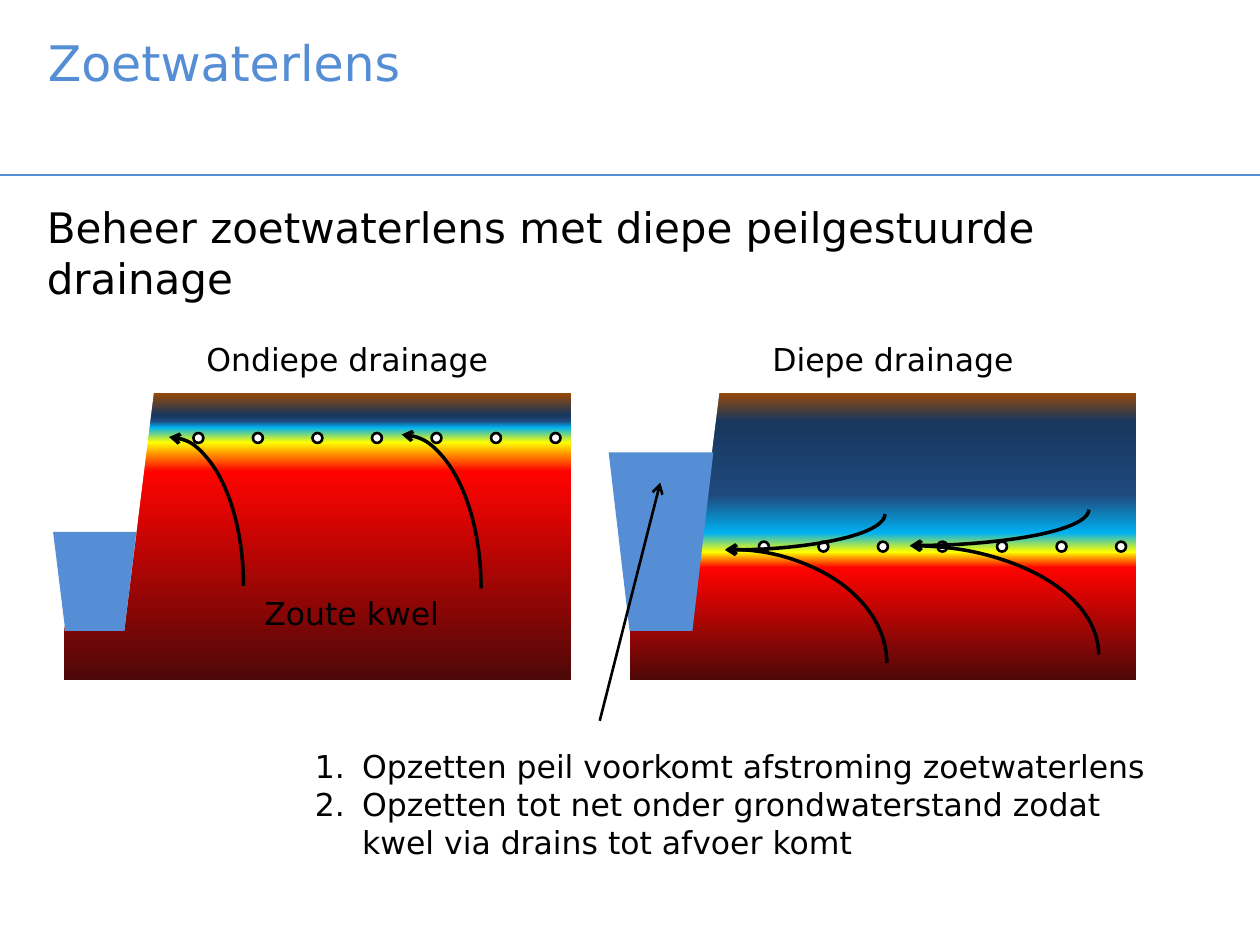
from lxml import etree
from pptx import Presentation
from pptx.dml.color import RGBColor
from pptx.enum.shapes import MSO_CONNECTOR, MSO_SHAPE
from pptx.enum.text import MSO_ANCHOR, MSO_AUTO_SIZE, PP_ALIGN
from pptx.oxml.ns import qn
from pptx.util import Cm, Pt

RECTANGLE, TRAPEZOID = MSO_SHAPE.RECTANGLE, MSO_SHAPE.TRAPEZOID
OVAL, ARC = MSO_SHAPE.OVAL, MSO_SHAPE.ARC
STRAIGHT = MSO_CONNECTOR.STRAIGHT
TOP, LEFT = MSO_ANCHOR.TOP, PP_ALIGN.LEFT
NO_FIT, GROW = MSO_AUTO_SIZE.NONE, MSO_AUTO_SIZE.SHAPE_TO_FIT_TEXT

FONT = "DejaVu Sans"
BLUE = RGBColor(0x55, 0x8E, 0xD5)
BLACK = RGBColor(0x00, 0x00, 0x00)
WHITE = RGBColor(0xFF, 0xFF, 0xFF)
YELLOW = RGBColor(0xFF, 0xFF, 0x00)
ORANGE = RGBColor(0xFF, 0x7A, 0x00)
RED = RGBColor(0xFF, 0x03, 0x00)
DARK_RED = RGBColor(0x4D, 0x08, 0x08)
BROWN = RGBColor(0x98, 0x48, 0x07)
NAVY = RGBColor(0x17, 0x37, 0x5E)
DARK_BLUE = RGBColor(0x1F, 0x49, 0x7D)
CYAN = RGBColor(0x00, 0xB0, 0xF0)

# Gradient stops from top to bottom, in percent
SALT = [(0, YELLOW), (6, ORANGE), (12, RED), (100, DARK_RED)]
SHALLOW_LENS = [(1, BROWN), (45, NAVY), (57, DARK_BLUE), (70, CYAN), (100, YELLOW)]
DEEP_LENS = [(0, BROWN), (18, NAVY), (64, DARK_BLUE), (88, CYAN), (100, YELLOW)]

# Heights shared by both cross-sections, in cm
GROUND, DITCH_BED, BOTTOM = 7.92, 12.72, 13.72
DRAIN_COUNT, DRAIN_PITCH, DRAIN_SIZE = 7, 1.2, 0.2


def box(left, top, width, height):
    return Cm(left), Cm(top), Cm(width), Cm(height)


def write(frame, lines, size, color=BLACK, **frame_format):
    """Fill a text frame and return its paragraphs."""
    for name, value in frame_format.items():
        setattr(frame, name, value)
    frame.text = "\n".join(lines)
    font_format = {"name": FONT, "size": Pt(size)}
    for paragraph in frame.paragraphs:
        paragraph.alignment = LEFT
        paragraph.space_before = Pt(0)
        for run in paragraph.runs:
            for name, value in font_format.items():
                setattr(run.font, name, value)
            run.font.color.rgb = color
    return frame.paragraphs


def set_bullet(paragraph, tag, indent, **attributes):
    properties = paragraph._p.get_or_add_pPr()
    properties.set("marL", str(Cm(indent)))
    properties.set("indent", str(-Cm(indent)))
    etree.SubElement(properties, qn(tag), attributes)


def fill_placeholder(placeholder, place, lines, size, color=BLACK):
    for name, value in zip(("left", "top", "width", "height"), box(*place)):
        setattr(placeholder, name, value)
    return write(placeholder.text_frame, lines, size, color, word_wrap=True,
                 auto_size=NO_FIT, vertical_anchor=TOP)


def add_text(slide, place, lines, wrap=False):
    text_box = slide.shapes.add_textbox(*box(*place))
    return write(text_box.text_frame, lines, 18, word_wrap=wrap, auto_size=GROW)


def set_line(shape, color, width, arrow_end=None):
    shape.line.color.rgb = color
    shape.line.width = Pt(width)
    if arrow_end:
        line = shape._element.spPr.find(qn("a:ln"))
        etree.SubElement(line, qn(arrow_end), type="arrow")


def add_shape(slide, kind, place, color=None, rotation=0):
    shape = slide.shapes.add_shape(kind, *box(*place))
    shape.shadow.inherit = False
    shape.rotation = rotation
    shape.line.fill.background()
    if color is None:
        shape.fill.background()
    else:
        shape.fill.solid()
        shape.fill.fore_color.rgb = color
    return shape


def add_layer(slide, place, stops):
    """Add a ground layer with a gradient running downwards."""
    layer = add_shape(slide, RECTANGLE, place)
    layer.fill.gradient()
    layer.fill.gradient_angle = 270
    stop_list = layer._element.spPr.find(".//" + qn("a:gsLst"))
    for stop in list(stop_list):
        stop_list.remove(stop)
    for position, color in stops:
        stop = etree.SubElement(stop_list, qn("a:gs"), pos=str(position * 1000))
        etree.SubElement(stop, qn("a:srgbClr"), val=str(color))


def add_flow(slide, place, arrow_end, rotation=0):
    set_line(add_shape(slide, ARC, place, rotation=rotation), BLACK, 2, arrow_end)


def add_connector(slide, start, end, color, width, arrow_end=None):
    connector = slide.shapes.add_connector(
        STRAIGHT, *[Cm(value) for value in (*start, *end)])
    set_line(connector, color, width, arrow_end)
    etree.SubElement(connector._element.spPr, qn("a:effectLst"))


def add_section(slide, left, interface, lens, water, slope, drain_top):
    """Draw a cross-section: ground layers, ditch and row of drains."""
    add_layer(slide, (left, interface, 10.21, BOTTOM - interface), SALT)
    add_layer(slide, (left + 1.19, GROUND, 9.02, interface - GROUND), lens)
    add_shape(slide, TRAPEZOID, (left - 0.59, GROUND, 2.39, DITCH_BED - GROUND),
              WHITE, 180)
    water_left, water_top, water_width = water
    ditch = add_shape(slide, TRAPEZOID, (water_left, water_top, water_width,
                                         DITCH_BED - water_top), BLUE, 180)
    ditch.adjustments[0] = slope
    for index in range(DRAIN_COUNT):
        drain_left = left + 2.6 + index * DRAIN_PITCH
        drain = add_shape(slide, OVAL,
                          (drain_left, drain_top, DRAIN_SIZE, DRAIN_SIZE), WHITE)
        set_line(drain, BLACK, 1.5)


def main():
    presentation = Presentation()
    presentation.slide_width, presentation.slide_height = Cm(25.4), Cm(19.05)
    slide = presentation.slides.add_slide(presentation.slide_layouts[1])

    # Heading and main statement
    add_connector(slide, (0, 3.53), (25.4, 3.53), BLUE, 0.75)
    fill_placeholder(slide.shapes.title, (0.71, 0.53, 24, 2.59),
                     ["Zoetwaterlens"], 28, BLUE)
    statement = fill_placeholder(
        slide.placeholders[1], (0.69, 3.94, 24, 14.6),
        ["Beheer zoetwaterlens met diepe peilgestuurde drainage"], 24)
    set_bullet(statement[0], "a:buNone", 0)

    # Cross-sections with shallow and deep drainage
    add_section(slide, 1.3, 8.92, SHALLOW_LENS, (1.07, 10.72, 1.68), 0.147, 8.73)
    add_text(slide, (3.91, 6.73, 6.2, 1.02), ["Ondiepe drainage"])
    add_section(slide, 12.7, 11.13, DEEP_LENS, (12.27, 9.12, 2.11), 0.2, 10.92)
    add_text(slide, (15.32, 6.73, 5.38, 1.02), ["Diepe drainage"])

    # Numbered notes, pointing to the ditch level
    notes = add_text(slide, (6.1, 14.94, 17.81, 2.57), [
        "Opzetten peil voorkomt afstroming zoetwaterlens",
        "Opzetten tot net onder grondwaterstand zodat kwel via drains tot afvoer komt",
    ], wrap=True)
    for paragraph in notes:
        set_bullet(paragraph, "a:buAutoNum", 0.95, type="arabicPeriod")
    add_connector(slide, (12.09, 14.53), (13.31, 9.73), BLACK, 1.5, "a:tailEnd")

    # Upward seepage towards the drains
    for place in ((11.38, 11.07, 6.5, 4.6), (14.53, 11, 7.62, 4.39),
                  (1.91, 8.81, 3, 6), (6.5, 8.76, 3.2, 6.2)):
        add_flow(slide, place, "a:headEnd")
    add_text(slide, (5.08, 11.86, 4.06, 1.02), ["Zoute kwel"])

    # Downward flow from the freshwater lens
    for place in ((17.63, 6.68, 1.45, 7.19), (13.89, 7.14, 1.45, 6.45)):
        add_flow(slide, place, "a:tailEnd", 90)

    presentation.save("out.pptx")


if __name__ == "__main__":
    main()
